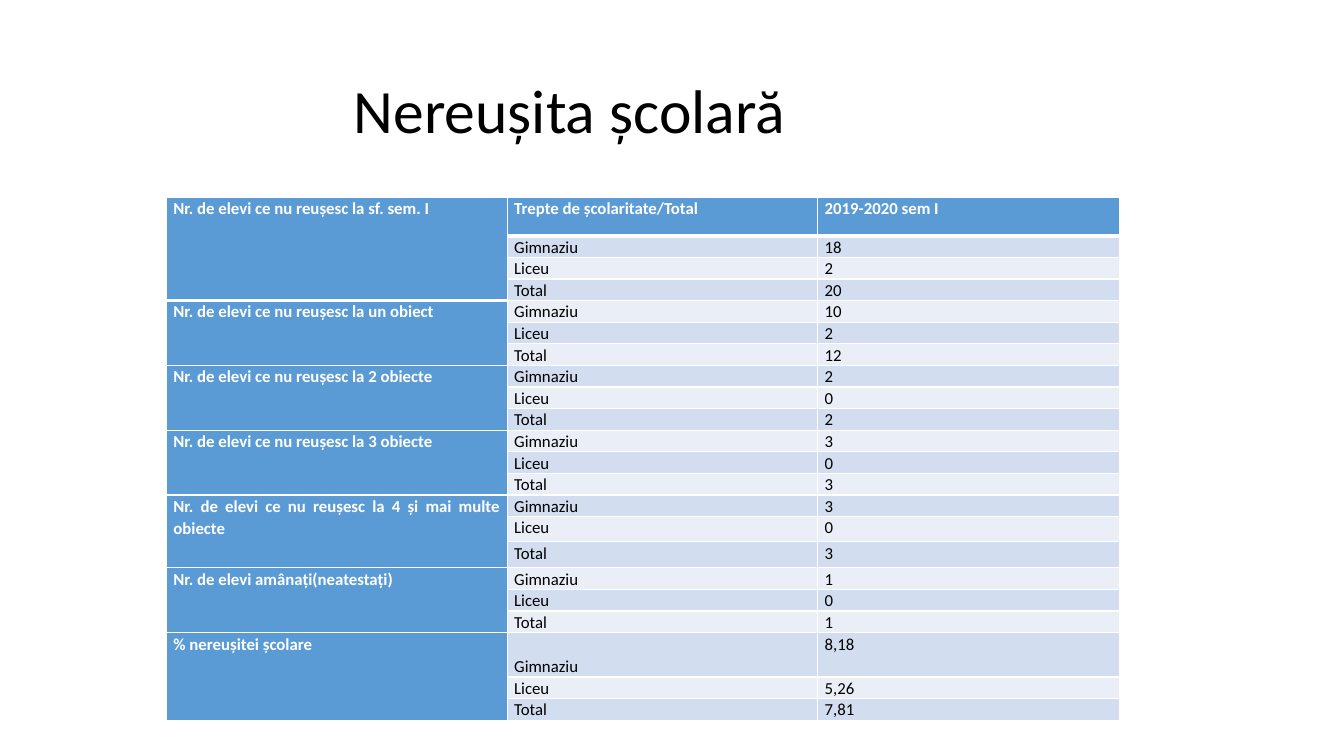
from dataclasses import dataclass

from lxml.etree import SubElement
from pptx import Presentation
from pptx.dml.color import RGBColor
from pptx.enum.text import MSO_ANCHOR, PP_ALIGN
from pptx.oxml.ns import qn
from pptx.table import Table, _Cell
from pptx.text.text import TextFrame
from pptx.util import Inches, Pt

COLORS = {
    "header": "5B9BD5",
    "band_dark": "D2DEEF",
    "band_light": "EAEFF7",
    "white": "FFFFFF",
    "black": "000000",
}
FONT = "Calibri"
STAGES = ("Gimnaziu", "Liceu", "Total")
COLUMN_WIDTHS = (3.38, 3.08, 2.99)
ROW_HEIGHT = 0.19
SPECIAL_HEIGHTS = {0: 0.38, 7: 0.21, 14: 0.25, 15: 0.26, 19: 0.44}


@dataclass(frozen=True)
class Indicator:
    label: str
    values: tuple[str, str, str]


INDICATORS = (
    Indicator("Nr. de elevi ce nu reușesc la sf. sem. I", ("18", "2", "20")),
    Indicator("Nr. de elevi ce nu reușesc la un obiect", ("10", "2", "12")),
    Indicator("Nr. de elevi ce nu reușesc la 2 obiecte", ("2", "0", "2")),
    Indicator("Nr. de elevi ce nu reușesc la 3 obiecte", ("3", "0", "3")),
    Indicator("Nr. de elevi ce nu reușesc la 4 și mai multe obiecte", ("3", "0", "3")),
    Indicator("Nr. de elevi amânați(neatestați)", ("1", "0", "1")),
    Indicator("% nereușitei școlare", ("8,18", "5,26", "7,81")),
)


def write_text(frame: TextFrame, text: str, *, size: float, color: str,
               spacing: float, align: PP_ALIGN, bold: bool = False) -> None:
    frame.word_wrap = True
    para = frame.paragraphs[0]
    para.alignment = align
    para.line_spacing = spacing
    span = para.add_run()
    span.text = text
    span.font.name = FONT
    span.font.size = Pt(size)
    span.font.bold = bold
    span.font.color.rgb = RGBColor.from_string(COLORS[color])


def add_borders(cell: _Cell, bottom: float) -> None:
    """Give the cell white borders, 1 pt except for the bottom one."""
    properties = cell._tc.get_or_add_tcPr()
    for side, width in (("L", 1), ("R", 1), ("T", 1), ("B", bottom)):
        line = SubElement(properties, qn(f"a:ln{side}"), w=str(Pt(width)))
        fill = SubElement(line, qn("a:solidFill"))
        SubElement(fill, qn("a:srgbClr"), val=COLORS["white"])


def fill_cell(cell: _Cell, text: str, fill: str, *, heading: bool = False,
              bottom: float = 1) -> None:
    cell.margin_left = cell.margin_right = Inches(0.07)
    cell.margin_top = cell.margin_bottom = 0
    add_borders(cell, bottom)
    cell.fill.solid()
    cell.fill.fore_color.rgb = RGBColor.from_string(COLORS[fill])
    write_text(cell.text_frame, text, size=12, spacing=1.07, bold=heading,
               color="white" if heading else "black", align=PP_ALIGN.JUSTIFY)


def fill_indicator(table: Table, index: int, indicator: Indicator) -> None:
    first_row = 1 + index * len(STAGES)
    # The first label also covers the header row.
    label_cell = table.cell(first_row if index else 0, 0)
    label_cell.merge(table.cell(first_row + len(STAGES) - 1, 0))
    fill_cell(label_cell, indicator.label, "header", heading=True,
              bottom=1 if index else 3)
    for row, (stage, value) in enumerate(zip(STAGES, indicator.values), first_row):
        band = "band_dark" if row % 2 else "band_light"
        fill_cell(table.cell(row, 1), stage, band)
        fill_cell(table.cell(row, 2), value, band)


def main() -> None:
    deck = Presentation()
    deck.slide_width, deck.slide_height = Inches(13.33), Inches(7.5)
    page = deck.slides.add_slide(deck.slide_layouts[6])

    title = page.shapes.add_textbox(Inches(0.92), Inches(0.4), Inches(11.5), Inches(1.45))
    title.text_frame.margin_left = Inches(2.59)
    title.text_frame.vertical_anchor = MSO_ANCHOR.MIDDLE
    write_text(title.text_frame, "Nereușita școlară", size=44, color="black",
               spacing=0.9, align=PP_ALIGN.LEFT)

    row_count = 1 + len(INDICATORS) * len(STAGES)
    table = page.shapes.add_table(row_count, len(COLUMN_WIDTHS), Inches(1.65), Inches(1.96),
                                  Inches(sum(COLUMN_WIDTHS)), Inches(5.18)).table
    table.first_row = table.horz_banding = False
    for column, width in zip(table.columns, COLUMN_WIDTHS):
        column.width = Inches(width)
    for index, row in enumerate(table.rows):
        row.height = Inches(SPECIAL_HEIGHTS.get(index, ROW_HEIGHT))

    for column, heading in enumerate(("Trepte de școlaritate/Total", "2019-2020 sem I"), 1):
        fill_cell(table.cell(0, column), heading, "header", heading=True, bottom=3)
    for index, indicator in enumerate(INDICATORS):
        fill_indicator(table, index, indicator)
    percentage_row = row_count - len(STAGES)
    table.cell(percentage_row, 1).vertical_anchor = MSO_ANCHOR.BOTTOM

    deck.save("out.pptx")


if __name__ == "__main__":
    main()
